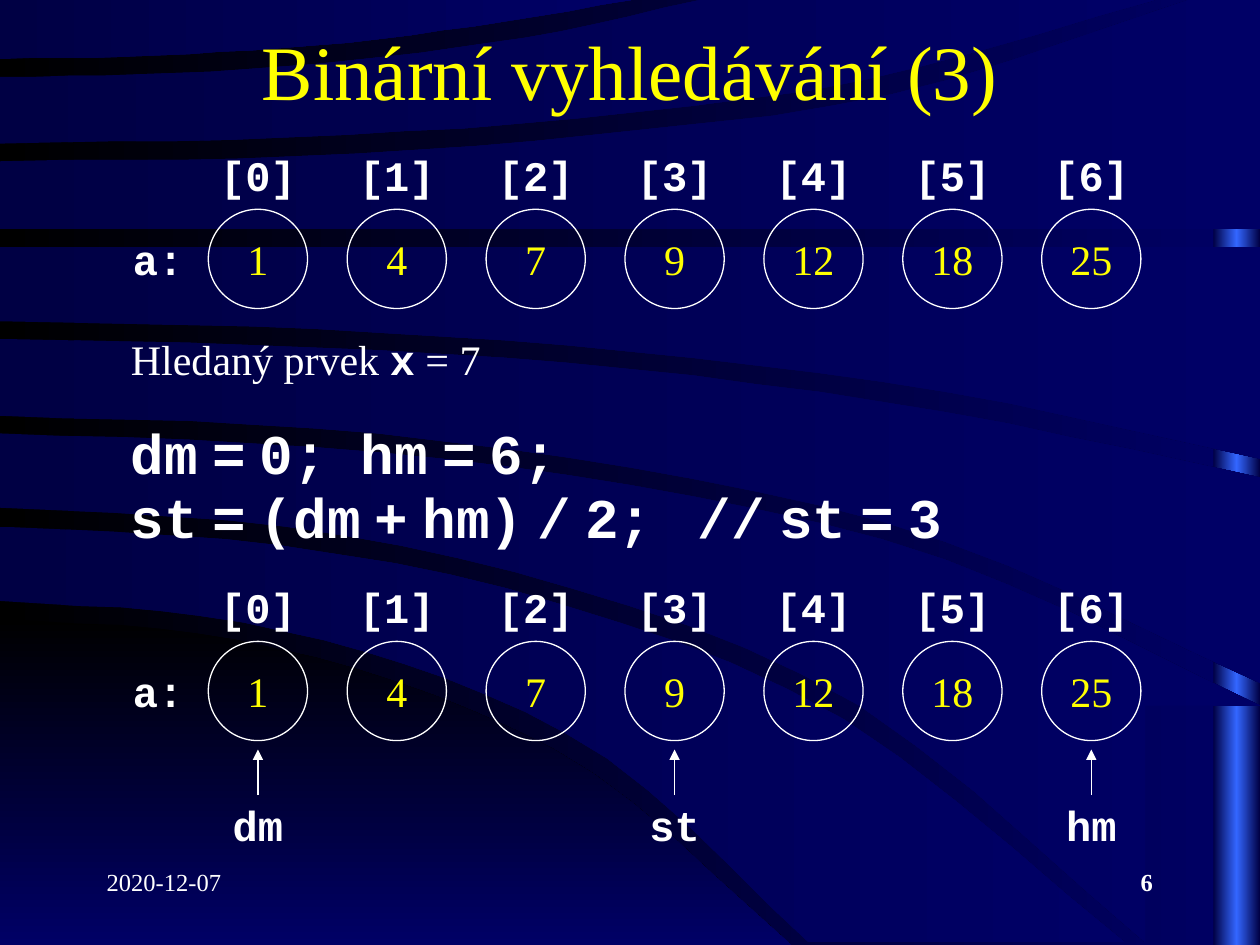
import copy
import dataclasses

import pptx
import pptx.dml.color
import pptx.enum.shapes
import pptx.enum.text
import pptx.oxml.ns
import pptx.util
from pptx.util import Cm

SHAPE = pptx.enum.shapes.MSO_SHAPE
ALIGN = pptx.enum.text.PP_ALIGN
ANCHOR = pptx.enum.text.MSO_ANCHOR


@dataclasses.dataclass(frozen=True)
class Theme:
    ink: str = "FFFFFF"
    accent: str = "FFFF00"
    black: str = "000000"
    navy: str = "000044"
    blue: str = "000066"
    glow: str = "3366FF"
    serif: str = "Times New Roman"
    mono: str = "Courier New"
    title_size: int = 44
    code_size: int = 32
    text_size: int = 24
    footer_size: int = 14
    line_width: float = 0.75


THEME = Theme()

VALUES = (1, 4, 7, 9, 12, 18, 25)
POINTERS = {0: "dm", 3: "st", 6: "hm"}
# Words of each code line; narrow spaces go between them.
CODE = (
    ("dm", "=", "0; hm", "=", "6;"),
    ("st", "=", "(dm", "+", "hm)", "/", "2;\t//", "st", "=", "3"),
)

# Array geometry in centimetres
FIRST_CENTER, PITCH, DIAMETER, LABEL_WIDTH = 5.2, 2.8, 2, 2.2

# Upper and lower edge of each band, in hundredths of an inch:
# where the edge ends, then its heights at equal steps from the left.
BAND_UNIT = Cm(0.0254)
CURVE_STEPS = 5
CORNER = ((628, (491, 503, 541, 614, 750)), (628, (750, 750)))
BANDS = (
    ((893, (418, 433, 480, 571, 748)), (642, (477, 489, 527, 602, 748))),
    ((1000, (344, 355, 385, 444, 560)), (909, (403, 418, 467, 560, 748))),
    ((1000, (269, 276, 293, 327, 379)), (1000, (330, 340, 371, 430, 542))),
    ((1000, (196, 196)), (1000, (255, 261, 279, 311, 364))),
    ((943, (128, 124, 107, 75, 0)), (1000, (182, 182))),
    ((556, (61, 58, 48, 30, 0)), (917, (114, 109, 94, 63, 0))),
    ((501, (0, 0)), (501, (47, 44, 36, 21, 0))),
)


def rgb(color):
    return pptx.dml.color.RGBColor.from_string(color)


def set_gradient(fill, owner, colors, angle=0):
    """Fill with evenly spaced colours; owner is the element that holds the fill."""
    fill.gradient()
    fill.gradient_angle = angle
    stop_list = owner.find(".//" + pptx.oxml.ns.qn("a:gsLst"))
    while len(stop_list) < len(colors):
        stop_list.append(copy.deepcopy(stop_list[-1]))
    for index, (stop, color) in enumerate(zip(fill.gradient_stops, colors)):
        stop.position = index / (len(colors) - 1)
        stop.color.rgb = rgb(color)


def set_font(font, size, color=THEME.ink, face=THEME.serif, bold=False):
    font.size, font.name, font.bold = pptx.util.Pt(size), face, bold
    font.color.rgb = rgb(color)


def smooth_edge(end, heights):
    """Points of a Catmull-Rom curve through equally spaced heights."""
    padded = (2 * heights[0] - heights[1], *heights, 2 * heights[-1] - heights[-2])
    spans = len(heights) - 1
    points = []
    for span in range(spans):
        before, start, stop, after = padded[span:span + 4]
        for step in range(CURVE_STEPS):
            t = step / CURVE_STEPS
            y = start + t / 2 * (
                stop - before
                + t * (2 * before - 5 * start + 4 * stop - after)
                + t * t * (3 * (start - stop) + after - before))
            points.append((round(end * (span + t) / spans), round(y)))
    return points + [(end, heights[-1])]


def add_band(slide, edges, colors, angle=0):
    upper, lower = (smooth_edge(*edge) for edge in edges)
    corner = (lower[-1][0], upper[-1][1])
    outline = upper + [corner] + lower[::-1]
    builder = slide.shapes.build_freeform(*outline[0], scale=BAND_UNIT)
    builder.add_line_segments(outline[1:])
    band = builder.convert_to_shape()
    set_gradient(band.fill, band.element, colors, angle)
    return band


def build_backdrop(slide, master):
    """Draw the bands and move them to the slide master."""
    set_gradient(master.background.fill, master.element, (THEME.black, THEME.blue))
    edge = slide.shapes.add_shape(SHAPE.RECTANGLE, Cm(24.46), 0, Cm(0.94), Cm(19.05))
    set_gradient(edge.fill, edge.element, (THEME.navy, THEME.glow, THEME.navy))
    parts = [edge, add_band(slide, CORNER, (THEME.black, THEME.blue), 270)]
    parts += [add_band(slide, edges, (THEME.navy, THEME.blue)) for edges in BANDS]
    for number, part in enumerate(parts, start=100):
        part.shadow.inherit = False
        part.line.fill.background()
        part.element.nvSpPr.cNvPr.id = number
        master.shapes.element.append(part.element)


def add_text(slide, text, box, size=THEME.text_size, face=THEME.mono, bold=True,
             align=ALIGN.CENTER, anchor=ANCHOR.MIDDLE):
    frame = slide.shapes.add_textbox(*map(Cm, box)).text_frame
    frame.word_wrap = True
    frame.vertical_anchor = anchor
    paragraph = frame.paragraphs[0]
    paragraph.text, paragraph.alignment = text, align
    set_font(paragraph.font, size, face=face, bold=bold)
    return paragraph


def add_label(slide, text, center, top):
    add_text(slide, text, (center - LABEL_WIDTH / 2, top, LABEL_WIDTH, 2))


def add_element(slide, value, center, top):
    circle = slide.shapes.add_shape(
        SHAPE.OVAL, Cm(center - DIAMETER / 2), Cm(top), Cm(DIAMETER), Cm(DIAMETER))
    circle.shadow.inherit = False
    circle.fill.background()
    circle.line.color.rgb = rgb(THEME.ink)
    circle.line.width = pptx.util.Pt(THEME.line_width)
    frame = circle.text_frame
    frame.margin_left = frame.margin_right = 0
    frame.vertical_anchor = ANCHOR.MIDDLE
    paragraph = frame.paragraphs[0]
    paragraph.text, paragraph.alignment = str(value), ALIGN.CENTER
    set_font(paragraph.font, THEME.text_size, THEME.accent)


def add_up_arrow(slide, x, bottom, top):
    arrow = slide.shapes.add_connector(
        pptx.enum.shapes.MSO_CONNECTOR.STRAIGHT, Cm(x), Cm(bottom), Cm(x), Cm(top))
    arrow.line.color.rgb = rgb(THEME.ink)
    arrow.line.width = pptx.util.Pt(THEME.line_width)
    properties = arrow.element.spPr
    line = properties.find(pptx.oxml.ns.qn("a:ln"))
    line.append(line.makeelement(pptx.oxml.ns.qn("a:tailEnd"), {"type": "triangle"}))
    properties.append(line.makeelement(pptx.oxml.ns.qn("a:effectLst")))


def add_array(slide, top, pointers):
    add_text(slide, "a:", (2.29, top, 1.8, DIAMETER))
    for index, value in enumerate(VALUES):
        center = FIRST_CENTER + index * PITCH
        add_element(slide, value, center, top)
        add_label(slide, f"[{index}]", center, top - 1.7)
        if index in pointers:
            add_up_arrow(slide, center, top + 3.1, top + 2.18)
            add_label(slide, pointers[index], center, top + 2.69)


def place(placeholder, left, top, width, height):
    placeholder.left, placeholder.top = Cm(left), Cm(top)
    placeholder.width, placeholder.height = Cm(width), Cm(height)
    placeholder.text_frame.auto_size = pptx.enum.text.MSO_AUTO_SIZE.NONE


def fill_title(title):
    place(title, 1.9, 0.23, 21.6, 2.34)
    title.text_frame.vertical_anchor = ANCHOR.MIDDLE
    paragraph = title.text_frame.paragraphs[0]
    paragraph.text, paragraph.alignment = "Binární vyhledávání (3)", ALIGN.CENTER
    set_font(paragraph.font, THEME.title_size, THEME.accent)


def add_run(paragraph, text, size, face=THEME.serif):
    run = paragraph.add_run()
    run.text = text
    set_font(run.font, size, face=face, bold=face == THEME.mono)


def fill_code(body):
    place(body, 1.7, 8.33, 22.23, 2.9)
    body.text_frame.margin_left, body.text_frame.margin_top = Cm(0.94), Cm(0.2)
    paragraph = body.text_frame.paragraphs[0]
    paragraph.line_spacing, paragraph.space_before = 0.95, 0
    for row, words in enumerate(CODE):
        if row:
            paragraph.add_line_break()
        for position, word in enumerate(words):
            if position:
                add_run(paragraph, " ", THEME.code_size)
            add_run(paragraph, word, THEME.code_size, THEME.mono)
    properties = paragraph._p.get_or_add_pPr()
    properties.set("marL", "0")
    properties.set("indent", "0")
    properties.append(properties.makeelement(pptx.oxml.ns.qn("a:buNone")))
    tabs = properties.makeelement(pptx.oxml.ns.qn("a:tabLst"))
    tab_stop = {"pos": str(Cm(11.94)), "algn": "l"}
    tabs.append(tabs.makeelement(pptx.oxml.ns.qn("a:tab"), tab_stop))
    properties.append(tabs)


def add_sought_value(slide):
    paragraph = add_text(slide, "", (2.39, 6.43, 7.7, 1.6), face=THEME.serif,
                         bold=False, align=ALIGN.LEFT)
    add_run(paragraph, "Hledaný prvek ", THEME.text_size)
    add_run(paragraph, "x", THEME.text_size, THEME.mono)
    add_run(paragraph, " = 7", THEME.text_size)


def add_footer(slide, text, left, align, bold):
    add_text(slide, text, (left, 17.35, 5.28, 1.27), THEME.footer_size, THEME.serif,
             bold, align, ANCHOR.TOP)


def main():
    deck = pptx.Presentation()
    deck.slide_width, deck.slide_height = Cm(25.4), Cm(19.05)
    slide = deck.slides.add_slide(deck.slide_layouts[1])
    build_backdrop(slide, deck.slide_master)
    fill_title(slide.shapes.title)
    fill_code(slide.placeholders[1])
    add_array(slide, 4.22, {})
    add_sought_value(slide)
    add_array(slide, 12.93, POINTERS)
    add_footer(slide, "2020-12-07", 1.9, ALIGN.LEFT, False)
    add_footer(slide, "6", 18.21, ALIGN.RIGHT, True)
    deck.save("out.pptx")


if __name__ == "__main__":
    main()
